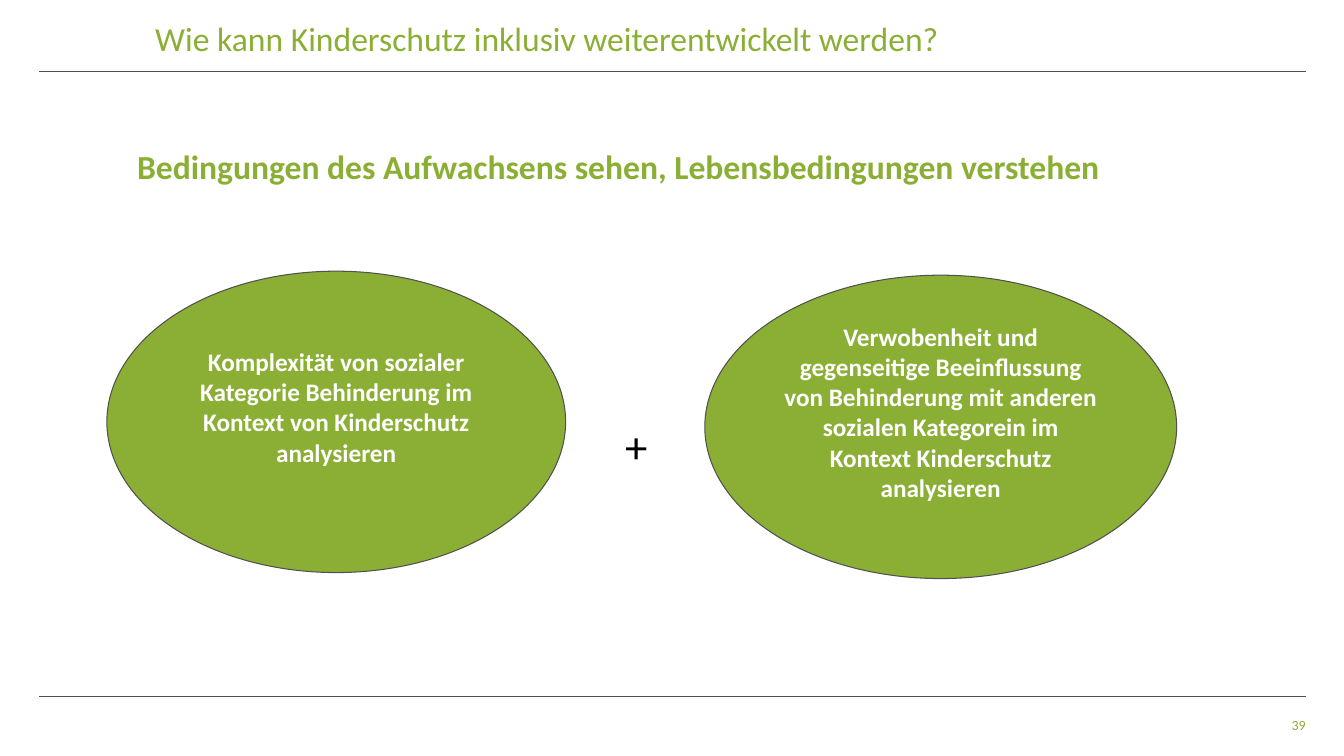
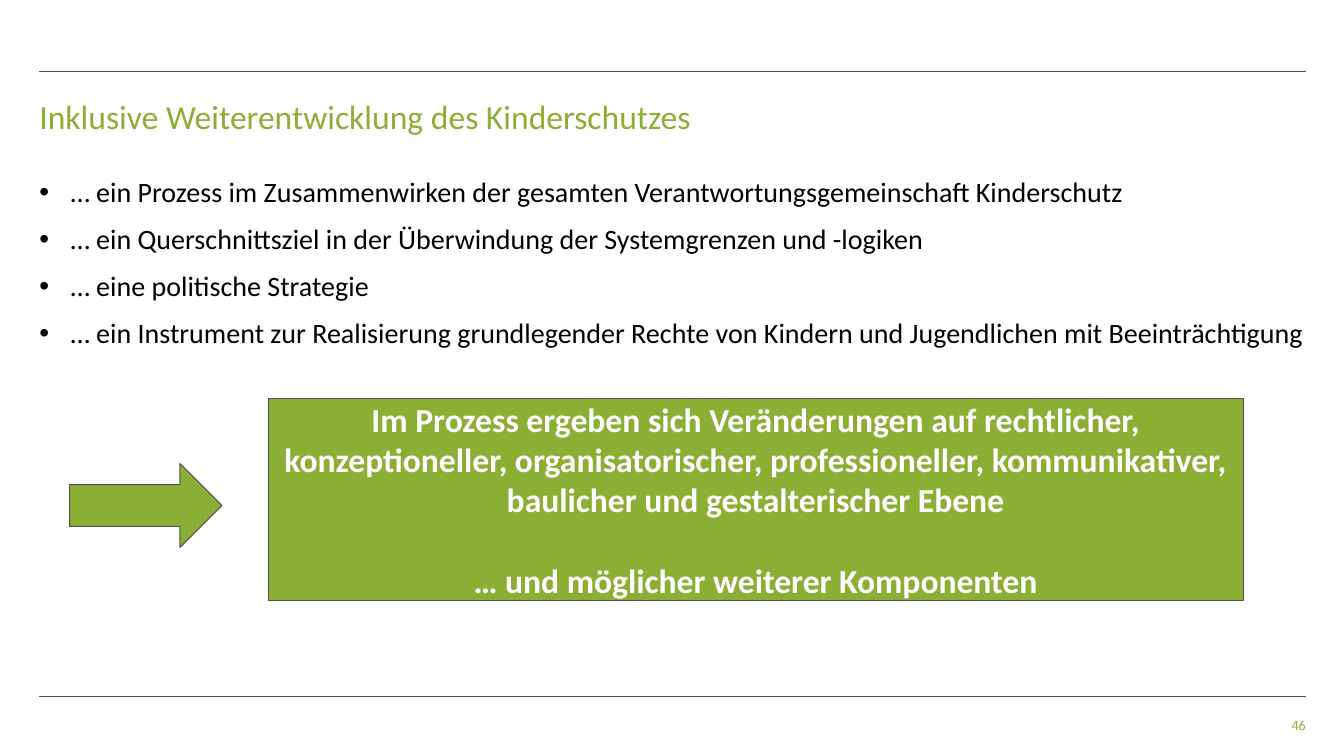
from dataclasses import dataclass

from lxml import etree
from pptx import Presentation
from pptx import util as u
from pptx.dml.color import RGBColor
from pptx.enum import shapes, text
from pptx.oxml.ns import qn

Inches, Pt = u.Inches, u.Pt
ALIGN, ANCHOR = text.PP_ALIGN, text.MSO_ANCHOR
SHAPE = shapes.MSO_SHAPE


@dataclass(frozen=True)
class Theme:
    font: str = "Calibri"
    green: RGBColor = RGBColor(0x8B, 0xAF, 0x35)
    grey: RGBColor = RGBColor(0x50, 0x50, 0x50)
    black: RGBColor = RGBColor(0, 0, 0)
    white: RGBColor = RGBColor(255, 255, 255)
    title: int = 24
    plus: int = 32
    body: int = 20
    oval: int = 18
    number: int = 10
    rule: float = 0.5
    outline: float = 0.75
    spacing: float = 0.9


THEME = Theme()
LEFT, RIGHT = 0.39, 12.95
WIDTH = RIGHT - LEFT


def place(shape, box):
    shape.left, shape.top, shape.width, shape.height = map(Inches, box)


def set_frame(shape, anchor, margin=0):
    frame = shape.text_frame
    frame.word_wrap = True
    frame.auto_size = text.MSO_AUTO_SIZE.NONE
    frame.vertical_anchor = anchor
    frame.margin_left = frame.margin_right = Inches(margin)
    frame.margin_top = frame.margin_bottom = Inches(margin / 2)
    return frame


def write(frame, lines, size, color, bold=False, align=ALIGN.LEFT,
          spacing=1.0, gap=0, bullet=False):
    for index, line in enumerate(lines):
        paragraph = frame.add_paragraph() if index else frame.paragraphs[0]
        if bullet:
            add_bullet(paragraph)
        paragraph.alignment = align
        paragraph.line_spacing = spacing
        paragraph.space_before = Pt(gap if index else 0)
        run = paragraph.add_run()
        run.text = line
        run.font.name, run.font.size = THEME.font, Pt(size)
        run.font.bold, run.font.color.rgb = bold, color


def add_bullet(paragraph, indent=0.31):
    props = paragraph._p.get_or_add_pPr()
    props.set("marL", str(Inches(indent)))
    props.set("indent", str(-Inches(indent)))
    etree.SubElement(props, qn("a:buFont")).set("typeface", "Arial")
    etree.SubElement(props, qn("a:buChar")).set("char", "•")


def add_text(slide, box, lines, size, color, anchor=ANCHOR.MIDDLE, **style):
    label = slide.shapes.add_textbox(*map(Inches, box))
    write(set_frame(label, anchor), lines, size, color, **style)


def add_green_shape(slide, kind, box):
    shape = slide.shapes.add_shape(kind, *map(Inches, box))
    shape.shadow.inherit = False
    shape.fill.solid()
    shape.fill.fore_color.rgb = THEME.green
    shape.line.color.rgb = THEME.grey
    shape.line.width = Pt(THEME.outline)
    return shape


def add_rule(slide, y):
    rule = slide.shapes.add_connector(
        shapes.MSO_CONNECTOR.STRAIGHT, *map(Inches, (LEFT, y, RIGHT, y)))
    rule.line.color.rgb = THEME.grey
    rule.line.width = Pt(THEME.rule)
    etree.SubElement(rule.element.spPr, qn("a:effectLst"))


def new_slide(deck, title, title_box, number, bold=False):
    """Slide with rules, title and page number."""
    slide = deck.slides.add_slide(deck.slide_layouts[5])
    for y in (0.71, 6.91):
        add_rule(slide, y)
    heading = slide.shapes.title
    place(heading, title_box)
    write(set_frame(heading, ANCHOR.MIDDLE), [title], THEME.title,
          THEME.green, bold=bold, spacing=THEME.spacing)
    add_text(slide, (RIGHT - 0.98, 7.13, 0.98, 0.15), [number], THEME.number,
             THEME.green, ANCHOR.BOTTOM, align=ALIGN.RIGHT,
             spacing=THEME.spacing)
    return slide


def add_oval(slide, box, statement):
    oval = add_green_shape(slide, SHAPE.OVAL, box)
    frame = set_frame(oval, ANCHOR.MIDDLE, 0.1)
    frame.margin_bottom = Inches(0.35)  # lifts the text above the centre
    write(frame, [statement], THEME.oval, THEME.white, bold=True,
          align=ALIGN.CENTER)


def add_conclusion(slide, box, lines):
    """Panel with the conclusion, and the arrow pointing at it."""
    left, top, _, height = box
    arrow_height = 0.83
    add_green_shape(slide, SHAPE.RIGHT_ARROW,
                    (left - 1.97, top + (height - arrow_height) / 2 + 0.06,
                     1.51, arrow_height))
    panel = add_green_shape(slide, SHAPE.RECTANGLE, box)
    write(set_frame(panel, ANCHOR.MIDDLE, 0.1), lines, THEME.title,
          THEME.white, bold=True, align=ALIGN.CENTER, gap=29)


def conditions_slide(deck):
    slide = new_slide(
        deck, "Bedingungen des Aufwachsens sehen, Lebensbedingungen verstehen",
        (1.36, 1.49, 11.26, 0.36), "39", bold=True)
    # Topic above the upper rule
    add_text(slide, (1.54, 0.22, 9.04, 0.36),
             ["Wie kann Kinderschutz inklusiv weiterentwickelt werden?"],
             THEME.title, THEME.green, spacing=THEME.spacing)
    # Two perspectives joined by a plus sign
    add_oval(slide, (1.06, 2.69, 4.55, 2.99),
             "Komplexität von sozialer Kategorie Behinderung im "
             "Kontext von Kinderschutz analysieren")
    add_oval(slide, (6.99, 2.73, 4.68, 3.01),
             "Verwobenheit und gegenseitige Beeinflussung von Behinderung mit "
             "anderen sozialen Kategorein im Kontext Kinderschutz analysieren")
    add_text(slide, (6.06, 4.1, 0.5, 0.64), ["+"], THEME.plus, THEME.black,
             align=ALIGN.CENTER)


def development_slide(deck):
    slide = new_slide(deck, "Inklusive Weiterentwicklung des Kinderschutzes",
                      (LEFT, 1, WIDTH, 0.36), "46")
    # Features of inclusive development
    add_text(slide, (LEFT, 1.77, WIDTH, 1.72), [
        "… ein Prozess im Zusammenwirken der gesamten "
        "Verantwortungsgemeinschaft Kinderschutz",
        "… ein Querschnittsziel in der Überwindung der Systemgrenzen "
        "und -logiken",
        "… eine politische Strategie",
        "… ein Instrument zur Realisierung grundlegender Rechte von Kindern "
        "und Jugendlichen mit Beeinträchtigung",
    ], THEME.body, THEME.black, ANCHOR.TOP, spacing=THEME.spacing, gap=12,
        bullet=True)
    add_conclusion(slide, (2.66, 3.95, 9.67, 2.01), [
        "Im Prozess ergeben sich Veränderungen auf rechtlicher, "
        "konzeptioneller, organisatorischer, professioneller, "
        "kommunikativer, baulicher und gestalterischer Ebene",
        "… und möglicher weiterer Komponenten",
    ])


def main():
    deck = Presentation()
    deck.slide_width, deck.slide_height = Inches(13.33), Inches(7.5)
    conditions_slide(deck)
    development_slide(deck)
    deck.save("out.pptx")


if __name__ == "__main__":
    main()
